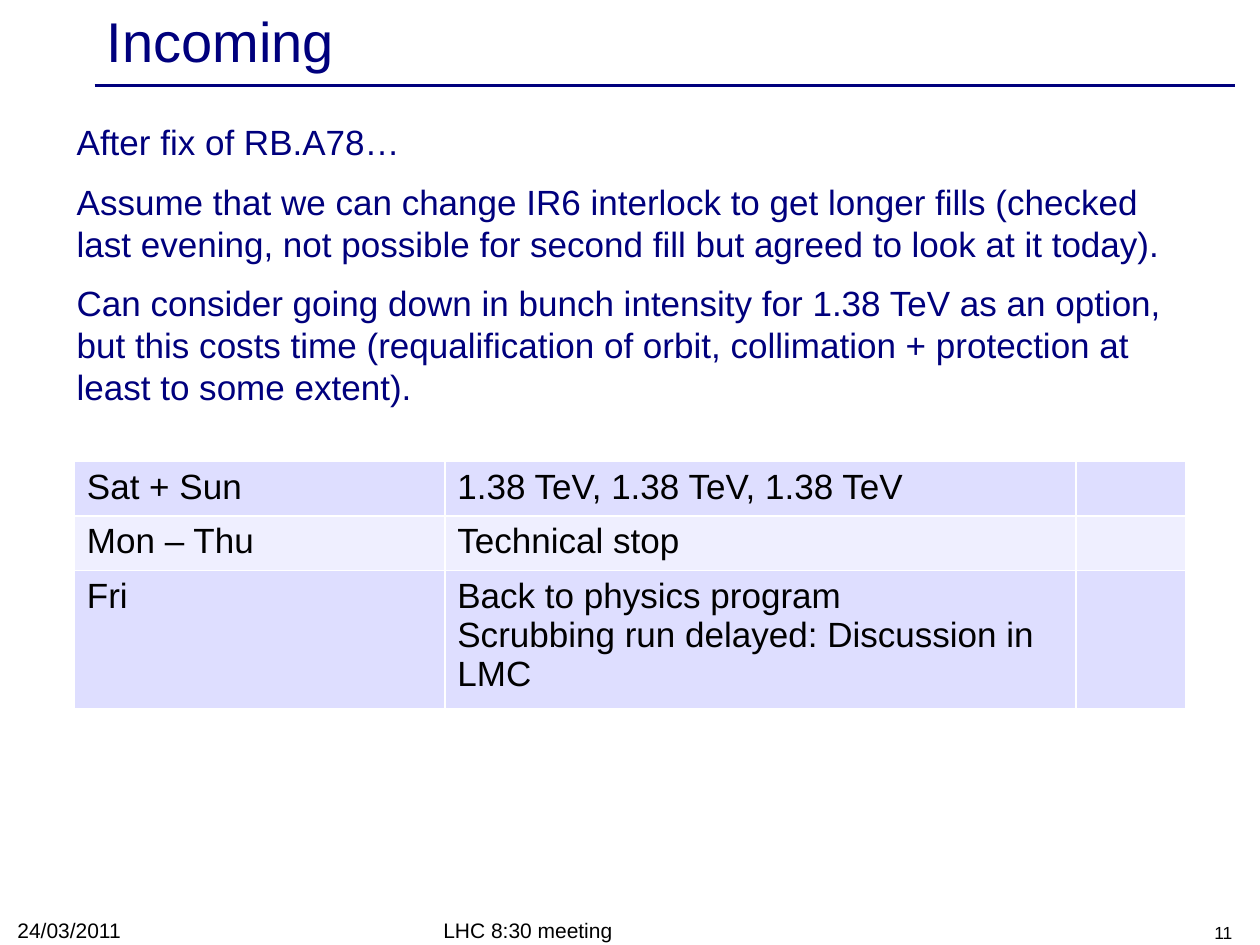
from lxml import etree
from pptx import Presentation
from pptx.dml.color import RGBColor
from pptx.enum.shapes import MSO_CONNECTOR
from pptx.enum.text import MSO_ANCHOR, PP_ALIGN
from pptx.oxml.ns import qn
from pptx.util import Inches, Pt

LEFT, RIGHT = PP_ALIGN.LEFT, PP_ALIGN.RIGHT
TOP, MIDDLE, BOTTOM = MSO_ANCHOR.TOP, MSO_ANCHOR.MIDDLE, MSO_ANCHOR.BOTTOM
STRAIGHT = MSO_CONNECTOR.STRAIGHT
NAVY, BLACK, WHITE = "00007D", "000000", "FFFFFF"
BANDS = ("DEDEFF", "EFEFFF")


def color(value):
    return RGBColor.from_string(value)


class SlideBuilder:
    font = "Arial"

    def __init__(self, slide):
        self.slide = slide

    def add_lines(self, frame, lines, size, ink, align=LEFT, gap=0):
        for index, line in enumerate(lines):
            paragraph = frame.add_paragraph() if index else frame.paragraphs[0]
            paragraph.alignment = align
            paragraph.space_before = Pt(gap if index else 0)
            run = paragraph.add_run()
            run.text = line
            run.font.name = self.font
            run.font.size = Pt(size)
            run.font.color.rgb = color(ink)

    def text(self, box, lines, size, ink, anchor=TOP, **layout):
        frame = self.slide.shapes.add_textbox(*map(Inches, box)).text_frame
        frame.word_wrap = True
        frame.vertical_anchor = anchor
        self.add_lines(frame, lines, size, ink, **layout)

    def rule(self, start, end, ink, width):
        rule = self.slide.shapes.add_connector(
            STRAIGHT, *map(Inches, start + end))
        rule.line.color.rgb = color(ink)
        rule.line.width = Pt(width)
        etree.SubElement(rule._element.spPr, qn("a:effectLst"))

    def border(self, cell, ink, width):
        properties = cell._tc.get_or_add_tcPr()
        for side in ("a:lnL", "a:lnR", "a:lnT", "a:lnB"):
            edge = etree.SubElement(properties, qn(side), w=str(Pt(width)))
            fill = etree.SubElement(edge, qn("a:solidFill"))
            etree.SubElement(fill, qn("a:srgbClr"), val=ink)

    def table(self, corner, widths, heights, rows, size):
        box = (*corner, sum(widths), sum(heights))
        table = self.slide.shapes.add_table(
            len(rows), len(widths), *map(Inches, box)).table
        for column, width in zip(table.columns, widths):
            column.width = Inches(width)
        for row, height in zip(table.rows, heights):
            row.height = Inches(height)
        for r, row in enumerate(rows):
            for c, lines in enumerate(row):
                cell = table.cell(r, c)
                self.border(cell, WHITE, 1)
                cell.fill.solid()
                cell.fill.fore_color.rgb = color(BANDS[r % 2])
                self.add_lines(cell.text_frame, lines, size, BLACK)


def main():
    deck = Presentation()
    deck.slide_width, deck.slide_height = Inches(10), Inches(7.5)
    builder = SlideBuilder(deck.slides.add_slide(deck.slide_layouts[6]))

    builder.rule((0.75, 0.68), (9.8, 0.68), NAVY, 2)
    builder.text((0.75, 0.03, 9, 0.57), ["Incoming"], 32, NAVY, MIDDLE)

    remarks = [
        "After fix of RB.A78…",
        "Assume that we can change IR6 interlock to get longer fills (checked "
        "last evening, not possible for second fill but agreed to look at it "
        "today).",
        "Can consider going down in bunch intensity for 1.38 TeV as an option, "
        "but this costs time (requalification of orbit, collimation + "
        "protection at least to some extent).",
    ]
    builder.text((0.51, 0.91, 8.98, 2.46), remarks, 20, NAVY, gap=10)

    schedule = [
        (["Sat + Sun"], ["1.38 TeV, 1.38 TeV, 1.38 TeV"], []),
        (["Mon – Thu"], ["Technical stop"], []),
        (["Fri"], ["Back to physics program",
                   "Scrubbing run delayed: Discussion in LMC"], []),
    ]
    builder.table((0.59, 3.66), (2.94, 5.01, 0.87), (0.41, 0.41, 1.02),
                  schedule, 20)

    builder.text((0.04, 7.24, 2.33, 0.29), ["24/03/2011"], 12, BLACK, BOTTOM)
    builder.text((3.42, 7.25, 3.17, 0.28), ["LHC 8:30 meeting"], 12, BLACK,
                 BOTTOM)
    builder.text((7.55, 7.25, 2.33, 0.28), ["11"], 10, BLACK, BOTTOM,
                 align=RIGHT)

    deck.save("out.pptx")


if __name__ == "__main__":
    main()
